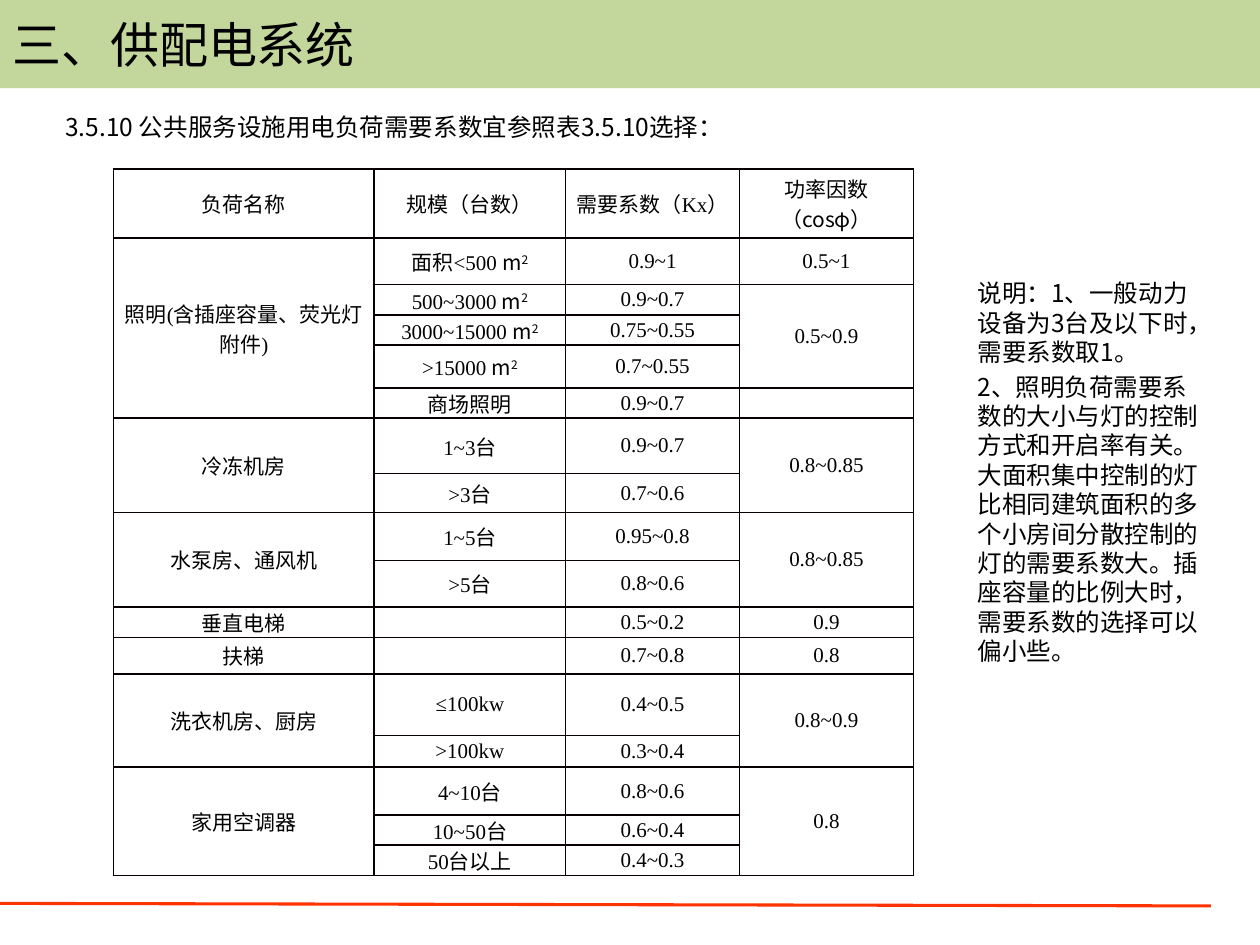
import pptx
import pptx.util
import pptx.dml.color
import pptx.enum.shapes
import pptx.enum.text
import pptx.oxml.ns
import lxml.etree

Inches, Pt = pptx.util.Inches, pptx.util.Pt
qn = pptx.oxml.ns.qn
SANS, SERIF = "Noto Sans CJK SC", "Times New Roman"
MIDDLE = pptx.enum.text.MSO_ANCHOR.MIDDLE


def color(hex_value):
    return pptx.dml.color.RGBColor.from_string(hex_value)


def add_run(paragraph, text, size, name):
    run = paragraph.add_run()
    run.text = text
    run.font.color.rgb = color("000000")
    for key, value in {"size": Pt(size), "name": name}.items():
        setattr(run.font, key, value)
    return run


deck = pptx.Presentation()
deck.slide_width, deck.slide_height = Inches(10), Inches(7.5)
slide = deck.slides.add_slide(deck.slide_layouts[6])

# Red rule at the foot
foot_rule = slide.shapes.add_connector(
    pptx.enum.shapes.MSO_CONNECTOR.STRAIGHT,
    Inches(0), Inches(7.17), Inches(9.61), Inches(7.19))
foot_rule.line.color.rgb = color("FF3300")
foot_rule.line.width = Pt(1.75)
lxml.etree.SubElement(foot_rule._element.spPr, qn("a:effectLst"))

# Title band
title = slide.shapes.add_shape(
    pptx.enum.shapes.MSO_SHAPE.RECTANGLE,
    Inches(0), Inches(0), Inches(10), Inches(0.7))
title.shadow.inherit = False
title.fill.solid()
title.fill.fore_color.rgb = color("C3D69B")
title.line.fill.background()
title.text_frame.vertical_anchor = MIDDLE
title_line = title.text_frame.paragraphs[0]
title_line.alignment = pptx.enum.text.PP_ALIGN.LEFT
add_run(title_line, "三、供配电系统", 28, "Calibri")

# Clause above the table and notes beside it
passages = [
    ((0.42, 0.84, 9, 0.5), ["3.5.10 公共服务设施用电负荷需要系数宜参照表3.5.10选择："]),
    ((7.66, 2.16, 1.97, 3.38), [
        "说明：1、一般动力设备为3台及以下时，需要系数取1。",
        "2、照明负荷需要系数的大小与灯的控制方式和开启率有关。"
        "大面积集中控制的灯比相同建筑面积的多个小房间分散控制的灯的需要系数大。"
        "插座容量的比例大时，需要系数的选择可以偏小些。"]),
]
for place, lines in passages:
    passage = slide.shapes.add_textbox(*map(Inches, place)).text_frame
    passage.word_wrap = True
    for index, line in enumerate(lines):
        paragraph = passage.add_paragraph() if index else passage.paragraphs[0]
        paragraph.space_before = Pt(2.8)
        add_run(paragraph, line, 14, SANS)

# Load table: "|" switches between serif and sans, "^" starts a superscript,
# None continues the cell above
loads = [
    ("负荷名称", "规模（台数）", "需要系数（Kx）", "功率|因数|（|cosφ|）"),
    ("照明(含插座容量、荧光灯附件)", "面积<500 |m^2", "0.9~1", "0.5~1"),
    (None, "500~3000 |m^2", "0.9~0.7", "0.5~0.9"),
    (None, "3000~15000 |m^2", "0.75~0.55", None),
    (None, ">15000 |m^2", "0.7~0.55", None),
    (None, "商场照明", "0.9~0.7", ""),
    ("冷冻机房", "1~3台", "0.9~0.7", "0.8~0.85"),
    (None, ">3台", "0.7~0.6", None),
    ("水泵房、通风机", "1~5台", "0.95~0.8", "0.8~0.85"),
    (None, ">5台", "0.8~0.6", None),
    ("|垂直|电梯", "", "0.5~0.2", "0.9"),
    ("|扶|梯", "", "0.7~0.8", "0.8"),
    ("洗衣机房、厨房", "≤100kw", "0.4~0.5", "0.8~0.9"),
    (None, ">100kw", "0.3~0.4", None),
    ("家用空调器", "4~10台", "0.8~0.6", "0.8"),
    (None, "10~50台", "0.6~0.4", None),
    (None, "50台以上", "0.4~0.3", None),
]
column_widths = [2.07, 1.52, 1.38, 1.38]
row_heights = [0.55, 0.37, 0.24, 0.24, 0.34, 0.24, 0.44, 0.31, 0.38,
               0.37, 0.24, 0.29, 0.49, 0.25, 0.38, 0.24, 0.24]
load_table = slide.shapes.add_table(
    len(loads), len(column_widths),
    Inches(0.9), Inches(1.34), Inches(6.35), Inches(sum(row_heights))).table
load_table.first_row = load_table.horz_banding = False
for column, width in zip(load_table.columns, column_widths):
    column.width = Inches(width)
for row, height in zip(load_table.rows, row_heights):
    row.height = Inches(height)

cell_format = {
    "vertical_anchor": MIDDLE,
    "margin_left": Inches(0.07), "margin_right": Inches(0.07),
    "margin_top": 0, "margin_bottom": 0,
}
for r, entries in enumerate(loads):
    for c, entry in enumerate(entries):
        cell = load_table.cell(r, c)
        for key, value in cell_format.items():
            setattr(cell, key, value)

        # Thin border on every side
        properties = cell._tc.get_or_add_tcPr()
        for side in ("a:lnL", "a:lnR", "a:lnT", "a:lnB"):
            border = lxml.etree.SubElement(properties, qn(side), w=str(Pt(1)))
            ink = lxml.etree.SubElement(border, qn("a:solidFill"))
            lxml.etree.SubElement(ink, qn("a:srgbClr"), val="080000")
        cell.fill.background()

        paragraph = cell.text_frame.paragraphs[0]
        paragraph.alignment = pptx.enum.text.PP_ALIGN.CENTER
        if not entry:
            # Keeps blank cells from stretching their row
            lxml.etree.SubElement(paragraph._p, qn("a:endParaRPr"), sz="1200")
        else:
            for index, part in enumerate(entry.split("|")):
                base, _, raised = part.partition("^")
                font_name = SANS if index % 2 else SERIF
                if base:
                    add_run(paragraph, base, 12, font_name)
                if raised:
                    exponent = add_run(paragraph, raised, 12, font_name)
                    exponent.font._element.set("baseline", "30000")

# Merge each entry with the continuation cells below it
for c in range(len(column_widths)):
    for r, entries in enumerate(loads):
        last = r
        while last + 1 < len(loads) and loads[last + 1][c] is None:
            last += 1
        if entries[c] is not None and last > r:
            load_table.cell(r, c).merge(load_table.cell(last, c))

deck.save("out.pptx")
